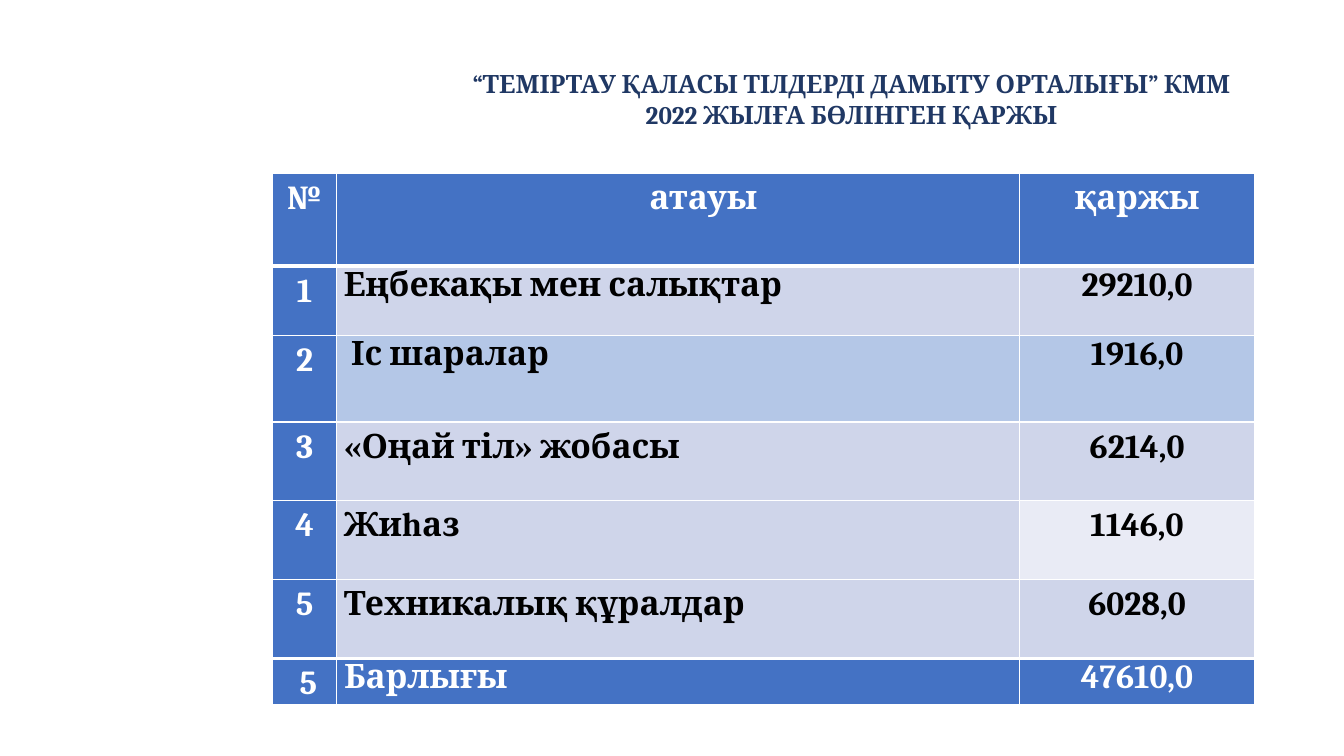
from lxml.etree import SubElement
from pptx import Presentation
from pptx.dml.color import RGBColor
from pptx.enum.text import MSO_AUTO_SIZE, PP_ALIGN
from pptx.oxml.ns import qn
from pptx.util import Pt

WHITE, BLACK, NAVY = "FFFFFF", "000000", "203864"
BLUE, PALE, SKY, MIST = "4472C4", "CFD5EA", "B4C7E7", "E9EBF5"
CENTER, LEFT = PP_ALIGN.CENTER, PP_ALIGN.LEFT


def color(hex_value):
    return RGBColor.from_string(hex_value)


def write(frame, text, size=24, ink=BLACK, align=LEFT, spacing=1.0, indent=0):
    paragraph = frame.paragraphs[0]
    paragraph.text = text
    paragraph.alignment = align
    paragraph.line_spacing = spacing
    if indent:
        properties = paragraph._p.get_or_add_pPr()
        properties.set("marL", str(Pt(indent)))
        properties.set("indent", "0")
    for run in paragraph.runs:
        run.font.name = "Cambria"
        run.font.size = Pt(size)
        run.font.bold = True
        run.font.color.rgb = color(ink)


class BudgetSlide:
    def __init__(self, slide):
        self.slide = slide

    def heading(self, text, left, top, width, height):
        box = self.slide.shapes.add_textbox(Pt(left), Pt(top), Pt(width), Pt(height))
        frame = box.text_frame
        frame.word_wrap = True
        frame.auto_size = MSO_AUTO_SIZE.SHAPE_TO_FIT_TEXT
        write(frame, text, size=18, ink=NAVY, align=CENTER)

    def table(self, left, top, widths, heights):
        grid = self.slide.shapes.add_table(
            len(heights), len(widths), Pt(left), Pt(top),
            Pt(sum(widths)), Pt(sum(heights))).table
        grid.first_row = grid.horz_banding = False
        for column, width in zip(grid.columns, widths):
            column.width = Pt(width)
        for row, height in zip(grid.rows, heights):
            row.height = Pt(height)
        return grid

    def cell(self, cell, text, fill, top_line=1, bottom_line=1, **text_format):
        cell.margin_left = cell.margin_right = Pt(5)
        cell.margin_top = cell.margin_bottom = 0
        write(cell.text_frame, text, **text_format)
        properties = cell._tc.get_or_add_tcPr()
        for side, weight in (("L", 1), ("R", 1), ("T", top_line), ("B", bottom_line)):
            line = SubElement(properties, qn(f"a:ln{side}"), w=str(Pt(weight)))
            solid = SubElement(line, qn("a:solidFill"))
            SubElement(solid, qn("a:srgbClr"), val=WHITE)
        cell.fill.solid()
        cell.fill.fore_color.rgb = color(fill)


def main():
    presentation = Presentation()
    presentation.slide_width, presentation.slide_height = Pt(960), Pt(540)
    budget = BudgetSlide(presentation.slides.add_slide(presentation.slide_layouts[6]))

    # Budget table: number, item, amount, item fill, amount fill, item line spacing
    rows = [
        ("№", "атауы", "қаржы", BLUE, BLUE, 1.15),
        ("1", "Еңбекақы мен салықтар", "29210,0", PALE, PALE, 1.0),
        ("2", " Іс шаралар", "1916,0", SKY, SKY, 1.0),
        ("3", "«Оңай тіл» жобасы", "6214,0", PALE, PALE, 1.15),
        ("4", "Жиhаз", "1146,0", PALE, MIST, 1.15),
        ("5", "Техникалық құралдар", "6028,0", PALE, PALE, 1.15),
        (" 5", "Барлығы", "47610,0", BLUE, BLUE, 1.0),
    ]
    table = budget.table(194.6, 124, [46, 487.5, 168.3],
                         [66, 49.5, 62, 56.3, 56.3, 56.3, 33])
    total = len(rows) - 1
    for index, (number, item, amount, item_fill, amount_fill, spacing) in enumerate(rows):
        header = index == 0
        ink = WHITE if index in (0, total) else BLACK
        lines = {"top_line": 3 if index in (1, total) else 1,
                 "bottom_line": 3 if index in (0, total - 1) else 1}
        budget.cell(table.cell(index, 0), number, BLUE, ink=WHITE,
                    align=CENTER, spacing=1.15, **lines)
        budget.cell(table.cell(index, 1), item, item_fill, ink=ink, spacing=spacing,
                    align=CENTER if header else LEFT,
                    indent=36 if header else 0, **lines)
        budget.cell(table.cell(index, 2), amount, amount_fill, ink=ink,
                    align=CENTER, spacing=spacing, **lines)

    # Heading
    budget.heading("“ТЕМІРТАУ ҚАЛАСЫ ТІЛДЕРДІ ДАМЫТУ ОРТАЛЫҒЫ” КММ\n"
                   "2022 ЖЫЛҒА БӨЛІНГЕН ҚАРЖЫ", 321, 45.5, 574.5, 51)

    presentation.save("out.pptx")


if __name__ == "__main__":
    main()
